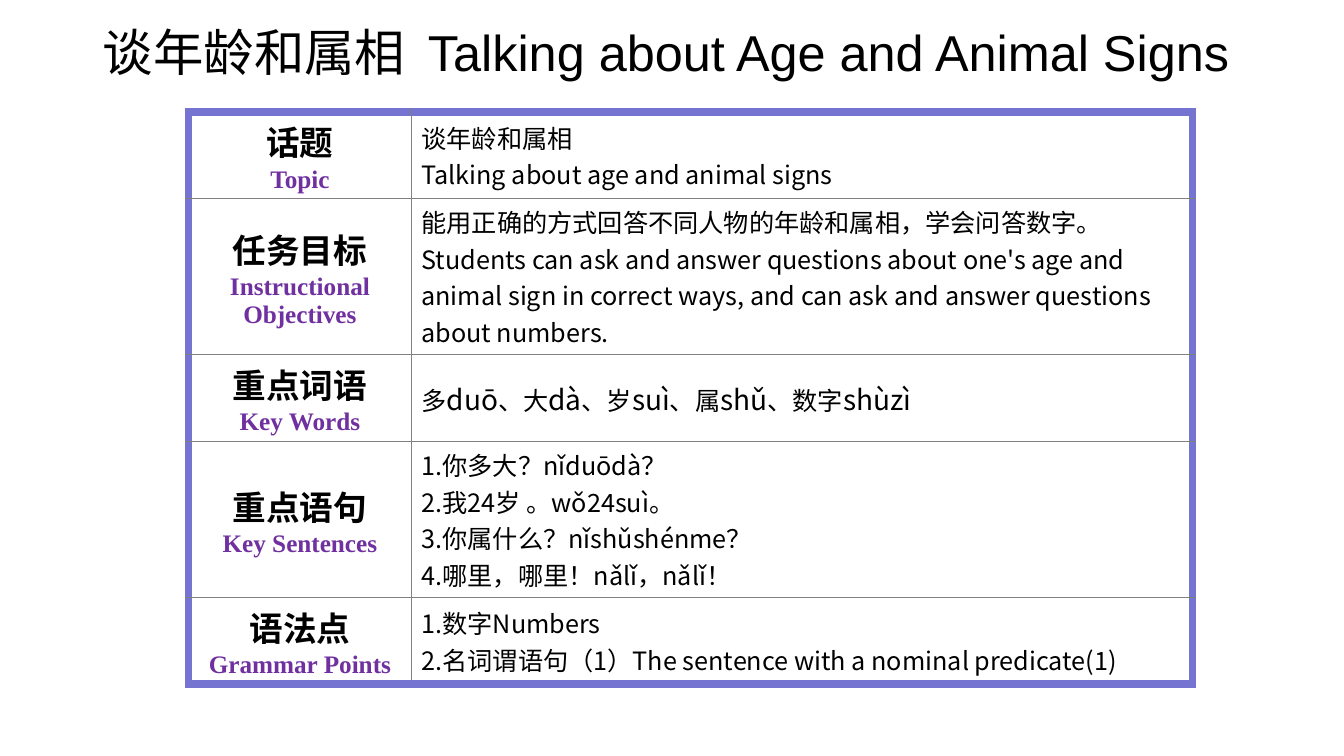
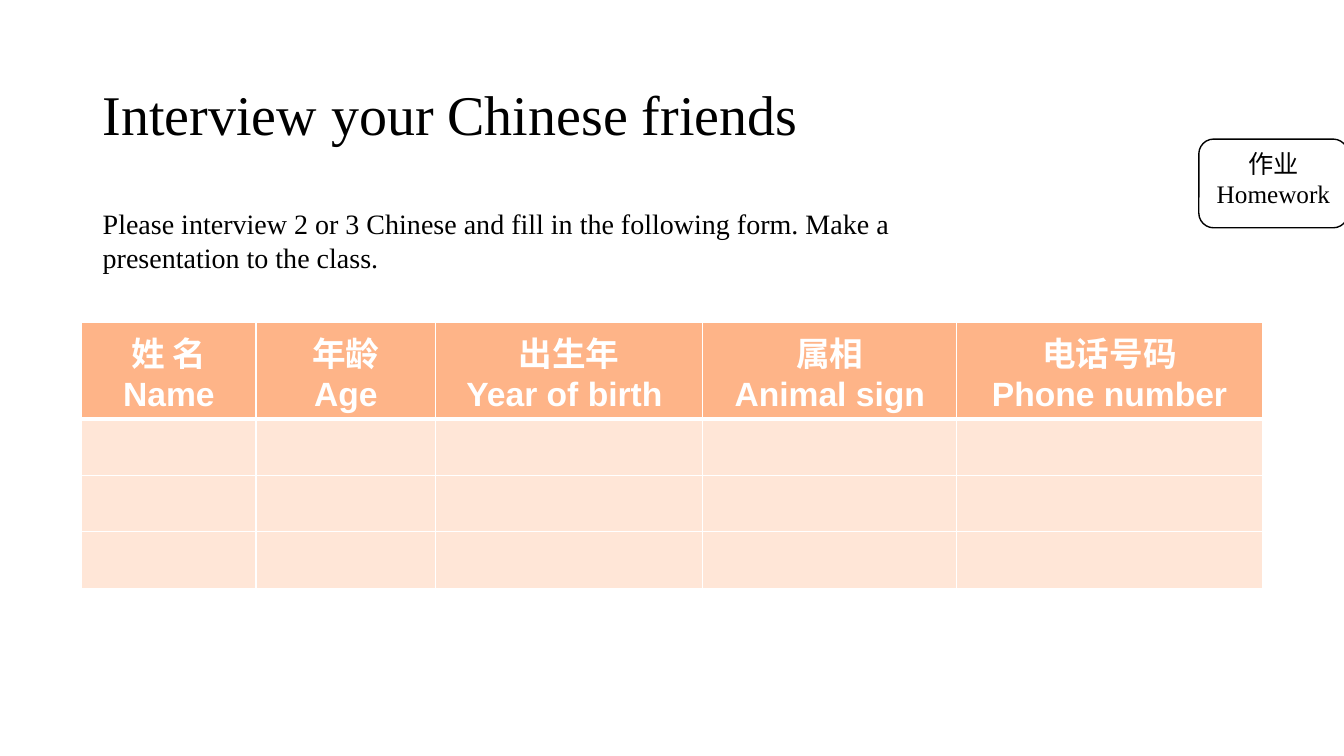
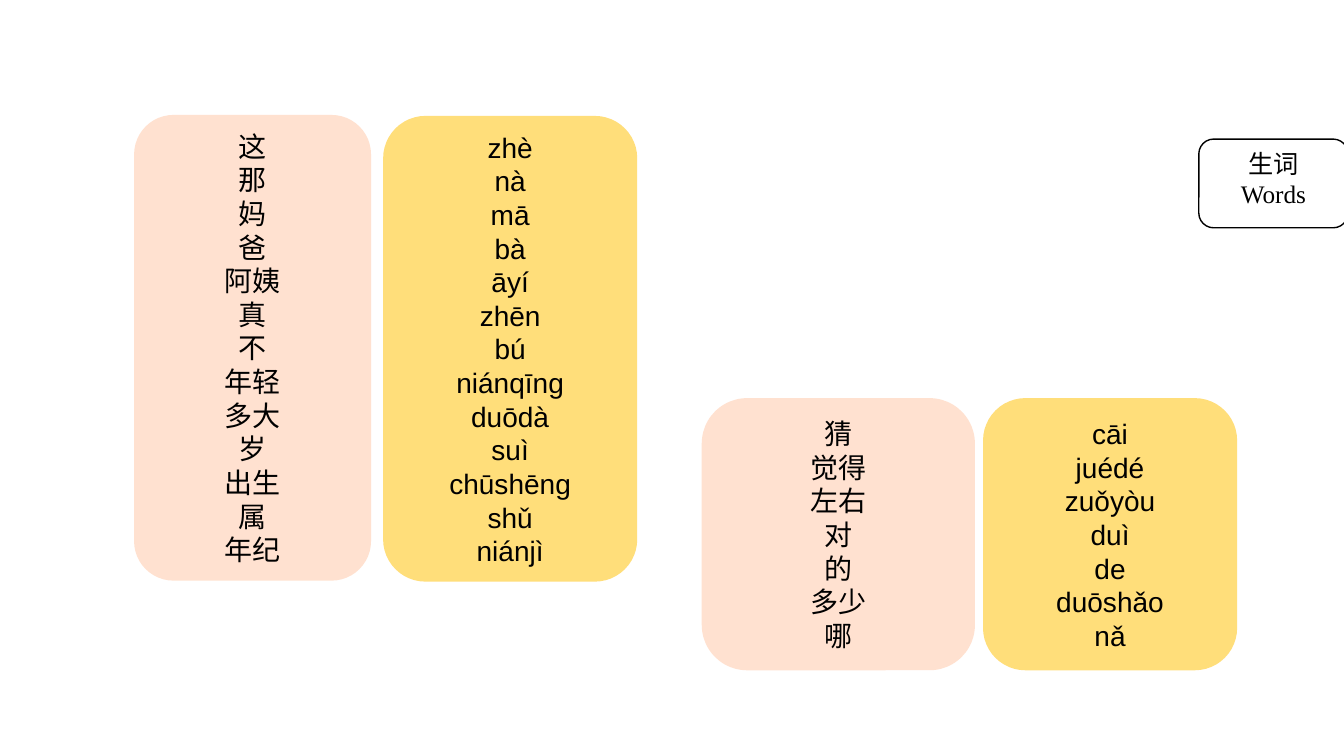
from dataclasses import dataclass
from lxml.etree import SubElement
from pptx import Presentation
from pptx.dml.color import RGBColor
from pptx.enum.shapes import MSO_SHAPE
from pptx.enum.text import MSO_ANCHOR, PP_ALIGN
from pptx.oxml.ns import qn
from pptx.util import Inches, Pt


@dataclass(frozen=True)
class Theme:
    sans: str = "Arial"
    serif: str = "Times New Roman"
    cjk: str = "Noto Sans CJK SC"
    black: str = "000000"
    white: str = "FFFFFF"
    purple: str = "7030A0"
    frame: str = "7575D1"
    grid: str = "808080"
    header: str = "FEB488"
    row: str = "FFE6D7"
    peach: str = "FFCDAF"
    gold: str = "FFC000"
    title: int = 36
    title_large: int = 40
    label: int = 24
    word: int = 20
    text: int = 18


T = Theme()

LESSON_TITLE = "谈年龄和属相  Talking about Age and Animal Signs"
LESSON = [
    ("话题", "Topic", 0.83, ["谈年龄和属相", "Talking about age and animal signs"]),
    ("任务目标", "Instructional Objectives", 1.41, [
        "能用正确的方式回答不同人物的年龄和属相，学会问答数字。",
        "Students can ask and answer questions about one's age and animal sign "
        "in correct ways, and can ask and answer questions about numbers."]),
    ("重点词语", "Key Words", 0.83, [
        ["多", "duō", "、大", "dà", "、岁", "suì", "、属", "shǔ", "、数字", "shùzì"]]),
    ("重点语句", "Key Sentences", 1.49, [
        "1.你多大？nǐduōdà？", "2.我24岁 。wǒ24suì。",
        "3.你属什么？nǐshǔshénme？", "4.哪里，哪里！nǎlǐ，nǎlǐ！"]),
    ("语法点", "Grammar Points", 0.85, [
        "1.数字Numbers", "2.名词谓语句（1）The sentence with a nominal predicate(1)"]),
]
LESSON_COLS = [2.21, 7.75]

INTERVIEW_TITLE = "Interview your Chinese friends"
INSTRUCTION = ("Please interview 2 or 3 Chinese and fill in the following form. "
               "Make a presentation to the class.")
FORM = [
    ("姓 名", "Name", 1.73),
    ("年龄", "Age", 1.78),
    ("出生年", "Year of birth ", 2.65),
    ("属相", "Animal sign", 2.52),
    ("电话号码", "Phone number", 3.03),
]
FORM_ROWS = [0.94] + [0.56] * 3

WORD_CARDS = [
    ((1.33, 1.14, 2.35, 4.62), T.peach, 58,
     "这 那 妈 爸 阿姨 真 不 年轻 多大 岁 出生 属 年纪"),
    ((6.96, 3.95, 2.71, 2.7), T.peach, 58, "猜 觉得 左右 对 的 多少 哪"),
    ((3.8, 1.15, 2.52, 4.62), T.gold, 52,
     "zhè nà mā bà āyí zhēn bú niánqīng duōdà suì chūshēng shǔ niánjì"),
    ((9.75, 3.95, 2.52, 2.7), T.gold, 52, "cāi juédé zuǒyòu duì de duōshǎo nǎ"),
]


def box(*lengths):
    return [Inches(n) for n in lengths]


def style(font, size, name, color=T.black, bold=False):
    font.size, font.name, font.bold = Pt(size), name, bold
    font.color.rgb = RGBColor.from_string(color)


def write(tf, lines, align=PP_ALIGN.LEFT):
    for i, (text, *look) in enumerate(lines):
        p = tf.paragraphs[0] if i == 0 else tf.add_paragraph()
        p.alignment = align
        if isinstance(text, str):
            p.text = text
            style(p.font, *look)
            continue
        for k, part in enumerate(text):
            r = p.add_run()
            r.text = part
            style(r.font, T.word if k % 2 else T.text, *look[1:])


def fill(target, color):
    target.fill.solid()
    target.fill.fore_color.rgb = RGBColor.from_string(color)


def borders(cell, **sides):
    pr = cell._tc.get_or_add_tcPr()
    for i, side in enumerate("LRTB"):
        color, width = sides[side]
        ln = pr.makeelement(qn(f"a:ln{side}"), {"w": str(Pt(width))})
        solid = SubElement(ln, qn("a:solidFill"))
        SubElement(solid, qn("a:srgbClr"), val=color)
        pr.insert(i, ln)


def add_title(s, text, place, size, font):
    sp = s.shapes.title
    sp.left, sp.top, sp.width, sp.height = box(*place)
    tf = sp.text_frame
    tf.vertical_anchor = MSO_ANCHOR.MIDDLE
    write(tf, [(text, size, font)])
    tf.paragraphs[0].line_spacing = 0.9


def add_grid(s, left, top, cols, rows):
    table = s.shapes.add_table(len(rows), len(cols), *box(
        left, top, sum(cols), sum(rows))).table
    table.horz_banding = False
    for col, width in zip(table.columns, cols):
        col.width = Inches(width)
    for row, height in zip(table.rows, rows):
        row.height = Inches(height)
    return table


def add_card(s, place, color, lines):
    sp = s.shapes.add_shape(MSO_SHAPE.ROUNDED_RECTANGLE, *box(*place))
    sp.shadow.inherit = False
    fill(sp, color)
    write(sp.text_frame, lines, PP_ALIGN.CENTER)
    return sp


def add_tag(s, chinese, english):
    sp = add_card(s, (11.89, 1.38, 1.48, 0.88), T.white,
                  [(chinese, T.text, T.sans), (english, T.text, T.serif)])
    sp.line.color.rgb = RGBColor.from_string(T.black)
    sp.line.width = Pt(1)
    sp.text_frame.vertical_anchor = MSO_ANCHOR.TOP


def lesson_slide(prs):
    s = prs.slides.add_slide(prs.slide_layouts[5])
    add_title(s, LESSON_TITLE, (0.92, -0.02, 11.5, 1.13), T.title, T.sans)
    table = add_grid(s, 1.87, 1.11, LESSON_COLS, [row[2] for row in LESSON])
    thick, thin = (T.frame, 6), (T.grid, 0.25)
    last = len(LESSON) - 1
    for i, (chinese, english, _, lines) in enumerate(LESSON):
        label, body = table.cell(i, 0), table.cell(i, 1)
        write(label.text_frame, [(chinese, T.label, T.cjk, T.black, True),
                                 (english, T.text, T.serif, T.purple, True)],
              PP_ALIGN.CENTER)
        write(body.text_frame, [(line, T.text, T.cjk) for line in lines])
        for cell in (label, body):
            cell.vertical_anchor = MSO_ANCHOR.MIDDLE
            fill(cell, T.white)
            borders(cell, L=thick if cell is label else thin,
                    R=thick if cell is body else thin,
                    T=thick if i == 0 else thin,
                    B=thick if i == last else thin)


def homework_slide(prs):
    s = prs.slides.add_slide(prs.slide_layouts[5])
    add_title(s, INTERVIEW_TITLE, (0.92, 0.44, 11.5, 1.45), T.title_large, T.serif)
    table = add_grid(s, 0.81, 3.2, [col[2] for col in FORM], FORM_ROWS)
    thin, thick = (T.white, 1), (T.white, 3)
    for i in range(len(FORM_ROWS)):
        for j, (chinese, english, _) in enumerate(FORM):
            cell = table.cell(i, j)
            fill(cell, T.row if i else T.header)
            borders(cell, L=thin, R=thin, T=thick if i == 1 else thin,
                    B=thin if i else thick)
            if i == 0:
                write(cell.text_frame, [(text, T.label, T.sans, T.white, True)
                                        for text in (chinese, english)],
                      PP_ALIGN.CENTER)
    add_tag(s, "作业", "Homework")
    tf = s.shapes.add_textbox(*box(0.92, 2, 8.19, 0.77)).text_frame
    tf.word_wrap = True
    write(tf, [(INSTRUCTION, T.word, T.serif)])


def words_slide(prs):
    s = prs.slides.add_slide(prs.slide_layouts[6])
    add_tag(s, "生词", "Words")
    for place, color, opacity, words in WORD_CARDS:
        sp = add_card(s, place, color,
                      [(word, T.word, T.sans) for word in words.split()])
        sp.line.fill.background()
        sp.text_frame.vertical_anchor = MSO_ANCHOR.MIDDLE
        clr = sp.fill._xPr.find(qn("a:solidFill"))[0]
        SubElement(clr, qn("a:alpha"), val=str(opacity * 1000))


def main():
    prs = Presentation()
    prs.slide_width, prs.slide_height = box(13.33, 7.5)
    lesson_slide(prs)
    homework_slide(prs)
    words_slide(prs)
    prs.save("out.pptx")


if __name__ == "__main__":
    main()
